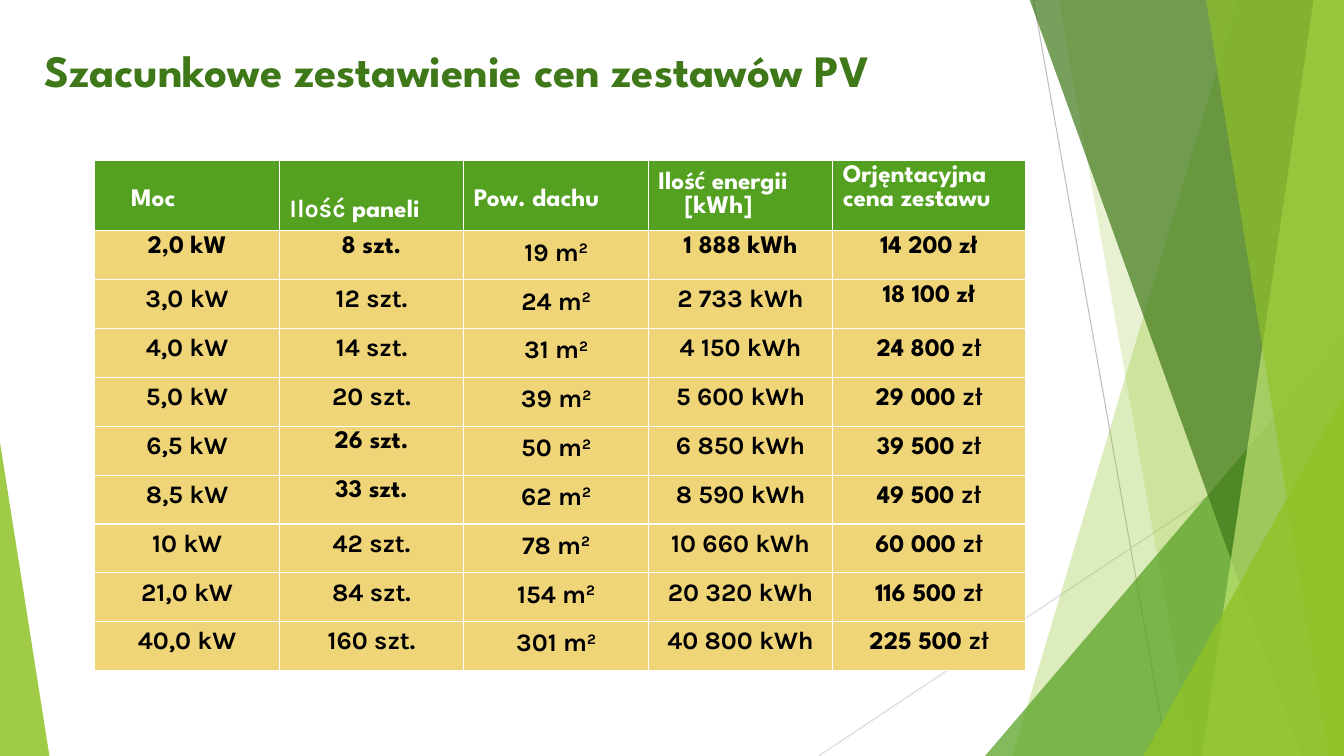
from lxml import etree
from pptx import Presentation
from pptx import util as u
from pptx.dml.color import RGBColor
from pptx.enum import shapes, text
from pptx.oxml.ns import qn

Inches = u.Inches
W, H = 13.33, 7.5
SPARTAN, KARLA, CALIBRI = "League Spartan", "Karla", "Calibri"
COLORS = {
    "lime": "90C226", "green": "54A021", "dark": "3F7819", "pale": "C0E474",
    "sand": "F0D578", "white": "FFFFFF", "black": "000000",
    "gray": "BFBFBF", "light_gray": "D9D9D9",
}
HEADERS = [
    (0.36, 0.28, [[("Moc", SPARTAN)]]),
    (0.1, 0.34, [[("Ilość ", KARLA), ("paneli", SPARTAN)]]),
    (0.1, 0.28, [[("Pow. dachu", SPARTAN)]]),
    (0.1, 0.05, [[("Iloś", SPARTAN), ("ć", CALIBRI), (" energii", SPARTAN)],
                 [("[kWh]", SPARTAN)]]),
    (0.1, 0.05, [[("Orjęntacyjna cena zestawu", SPARTAN)]]),
]
OFFERS = [
    ("2,0", "8", "19", "1 888", "14 200"),
    ("3,0", "12", "24", "2 733", "18 100"),
    ("4,0", "14", "31", "4 150", "24 800"),
    ("5,0", "20", "39", "5 600", "29 000"),
    ("6,5", "26", "50", "6 850", "39 500"),
    ("8,5", "33", "62", "8 590", "49 500"),
    ("10", "42", "78", "10 660", "60 000"),
    ("21,0", "84", "154", "20 320", "116 500"),
    ("40,0", "160", "301", "40 800", "225 500"),
]
UNITS = ["kW", "szt.", "m", "kWh", "zł"]
AREA, PRICE = 2, 4
SPARTAN_CELLS = {(0, 0), (0, 1), (0, 3), (0, 4), (1, 4), (4, 1), (5, 1)}


def rgb(name):
    return RGBColor.from_string(COLORS[name])


def paint(sp, color, opacity):
    sp.shadow.inherit = False
    sp.line.fill.background()
    sp.fill.solid()
    sp.fill.fore_color.rgb = rgb(color)
    clr = sp.fill._xPr.find(qn("a:solidFill"))[0]
    etree.SubElement(clr, qn("a:alpha")).set("val", str(opacity * 1000))


def add_line(s, x1, y1, x2, y2, color):
    ln = s.shapes.add_connector(shapes.MSO_CONNECTOR.STRAIGHT,
                                Inches(x1), Inches(y1), Inches(x2), Inches(y2))
    ln.line.color.rgb = rgb(color)
    ln.line.width = u.Pt(0.75)
    etree.SubElement(ln._element.spPr, qn("a:effectLst"))


def add_band(s, top_x, bottom_x, color, opacity):
    corners = [(top_x, -0.01), (W, -0.01), (W, H), (bottom_x, H)]
    pts = [(Inches(x), Inches(y)) for x, y in corners]
    fb = s.shapes.build_freeform(*pts[0], scale=1.0)
    fb.add_line_segments(pts[1:], close=True)
    paint(fb.convert_to_shape(), color, opacity)


def add_triangle(s, left, top, width, apex, color, opacity):
    sp = s.shapes.add_shape(shapes.MSO_SHAPE.ISOSCELES_TRIANGLE, Inches(left),
                            Inches(top), Inches(width), Inches(H - top))
    sp.adjustments[0] = apex
    paint(sp, color, opacity)


def add_run(p, value, font, color, size=18):
    r = p.add_run()
    r.text = value
    r.font.name = font
    r.font.size = u.Pt(size)
    r.font.bold = True
    r.font.color.rgb = rgb(color)
    return r


def add_title(s, value):
    tf = s.shapes.add_textbox(Inches(0.34), Inches(0.27),
                              Inches(9.83), Inches(0.84)).text_frame
    tf.word_wrap = True
    tf.vertical_anchor = text.MSO_ANCHOR.MIDDLE
    add_run(tf.paragraphs[0], value, SPARTAN, "dark", 32)


def fill_cell(cell, color):
    cell.fill.solid()
    cell.fill.fore_color.rgb = rgb(color)


def fill_header(cell, left, top, lines):
    fill_cell(cell, "green")
    cell.margin_left, cell.margin_top = Inches(left), Inches(top)
    for i, runs in enumerate(lines):
        p = cell.text_frame.add_paragraph() if i else cell.text_frame.paragraphs[0]
        if i:
            p._p.get_or_add_pPr().set("marL", str(Inches(0.26)))
        for value, font in runs:
            add_run(p, value, font, "white")


def fill_offer(cell, row, col, value):
    fill_cell(cell, "sand")
    p = cell.text_frame.paragraphs[0]
    p.alignment = text.PP_ALIGN.CENTER
    whole = f"{value} {UNITS[col]}"
    if (row, col) in SPARTAN_CELLS:
        add_run(p, whole, SPARTAN, "black")
    elif col == PRICE:
        add_run(p, value + " ", SPARTAN, "black")
        add_run(p, UNITS[col], KARLA, "black")
    else:
        add_run(p, whole, KARLA, "black")
    if col == AREA:
        p.line_spacing = 1.07
        p.space_after = u.Pt(8)
        power = add_run(p, "2", KARLA, "black")
        power._r.get_or_add_rPr().set("baseline", "30000")


def add_price_table(s):
    table = s.shapes.add_table(len(OFFERS) + 1, len(UNITS), Inches(0.94),
                               Inches(1.59), Inches(9.23), Inches(5.06)).table
    table.horz_banding = False
    for i, column in enumerate(table.columns):
        column.width = Inches(1.91 if i == PRICE else 1.83)
    for i, row in enumerate(table.rows):
        row.height = Inches(0.485 if i else 0.68)
    for col, header in enumerate(HEADERS):
        fill_header(table.cell(0, col), *header)
    for row, offer in enumerate(OFFERS):
        for col, value in enumerate(offer):
            fill_offer(table.cell(row + 1, col), row, col, value)


def add_backdrop(s):
    add_line(s, 10.25, 0, 11.58, H, "gray")
    add_line(s, W, 4.03, 8.12, H, "light_gray")
    add_band(s, 12.28, 10.04, "lime", 30)
    add_band(s, 10.5, 11.83, "lime", 20)
    add_triangle(s, 9.77, 3.33, 3.56, 1, "green", 72)
    add_band(s, 10.21, 12.91, "dark", 70)
    add_band(s, 13.03, 11.92, "pale", 70)
    add_band(s, 11.96, 13.18, "lime", 65)
    add_triangle(s, 11.34, 3.93, 1.99, 1, "lime", 80)
    add_triangle(s, 0, 4.39, 0.49, 0, "lime", 85)


def main():
    prs = Presentation()
    prs.slide_width, prs.slide_height = Inches(W), Inches(H)
    s = prs.slides.add_slide(prs.slide_layouts[6])
    add_backdrop(s)
    add_title(s, "Szacunkowe zestawienie cen zestawów PV")
    add_price_table(s)
    prs.save("out.pptx")


if __name__ == "__main__":
    main()
